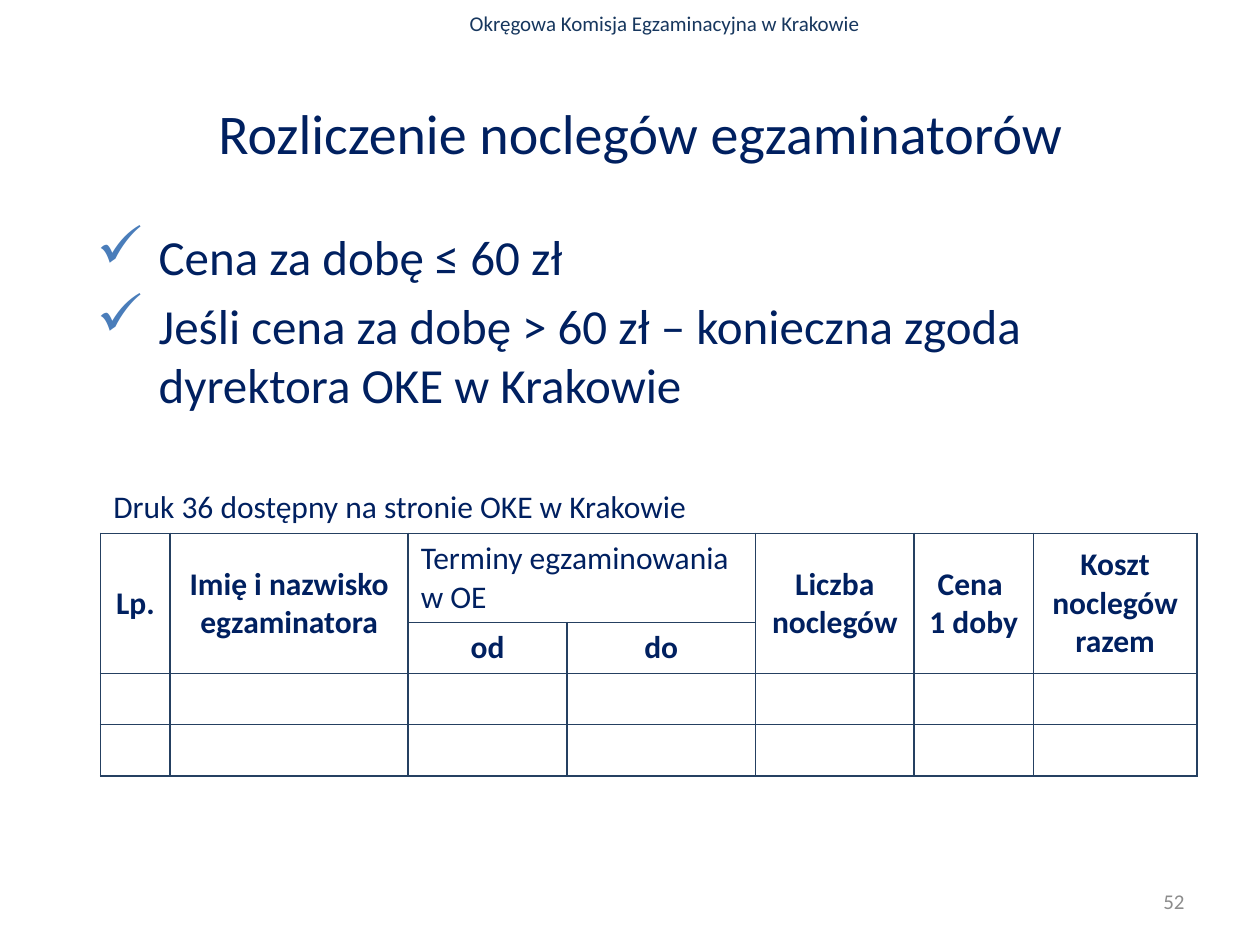
import pptx
import pptx.dml.color
import pptx.enum.text
import pptx.oxml
import pptx.oxml.ns
import pptx.util
from pptx.util import Cm

COLORS = {"text": "002060", "header": "17375E", "check": "4A7DBA",
          "border": "254061", "number": "8C8C8C"}
FONT = "Calibri"
ALIGN = pptx.enum.text.PP_ALIGN
ANCHOR = pptx.enum.text.MSO_ANCHOR

HEADER = "Okręgowa Komisja Egzaminacyjna w Krakowie"
TITLE = "Rozliczenie noclegów egzaminatorów"
RULES = ["Cena za dobę ≤ 60 zł",
         "Jeśli cena za dobę > 60 zł – konieczna zgoda dyrektora OKE w Krakowie"]
PAGE_NUMBER = "52"

COLUMN_WIDTHS = [1.4, 4.8, 3.2, 3.8, 3.2, 2.4, 3.3]
ROW_HEIGHTS = [1.02, 1.8, 1.03, 1.03, 1.03]
# row, column, rows spanned, columns spanned, text, format
CAPTION = {"anchor": ANCHOR.MIDDLE}
GROUP = {"anchor": ANCHOR.TOP}
HEADING = {"anchor": ANCHOR.MIDDLE, "align": ALIGN.CENTER, "bold": True}
CELLS = [
    (0, 0, 1, 7, "Druk 36 dostępny na stronie OKE w Krakowie", CAPTION),
    (1, 0, 2, 1, "Lp.", HEADING),
    (1, 1, 2, 1, "Imię i nazwisko egzaminatora", HEADING),
    (1, 2, 1, 2, "Terminy egzaminowania w OE", GROUP),
    (1, 4, 2, 1, "Liczba noclegów", HEADING),
    (1, 5, 2, 1, "Cena \v1 doby", HEADING),
    (1, 6, 2, 1, "Koszt noclegów razem", HEADING),
    (2, 2, 1, 1, "od", HEADING),
    (2, 3, 1, 1, "do", HEADING),
]


def xml(markup):
    tag, rest = markup.split(" ", 1)
    return pptx.oxml.parse_xml(f"{tag} {pptx.oxml.ns.nsdecls('a')} {rest}")


def write(para, text, size=18, color="text", align=ALIGN.LEFT, bold=False):
    para.text = text
    para.alignment = align
    for span in para.runs:
        span.font.name = FONT
        span.font.size = pptx.util.Pt(size)
        span.font.bold = bold
        span.font.color.rgb = pptx.dml.color.RGBColor.from_string(COLORS[color])


def add_text(page, place, texts, anchor=ANCHOR.TOP, check=False, **style):
    box = page.shapes.add_textbox(*(Cm(length) for length in place))
    frame = box.text_frame
    frame.word_wrap = True
    frame.vertical_anchor = anchor
    for index, text in enumerate(texts):
        para = frame.add_paragraph() if index else frame.paragraphs[0]
        if check:
            add_check(para)
        write(para, text, **style)
        if index:
            para.space_before = pptx.util.Pt(style["size"] * 0.2)


def add_check(para):
    """Give the paragraph a hanging tick bullet."""
    indent = Cm(1.25)
    properties = para._p.get_or_add_pPr()
    properties.set("marL", str(indent))
    properties.set("indent", str(-indent))
    for markup in (f'<a:buClr ><a:srgbClr val="{COLORS["check"]}"/></a:buClr>',
                   '<a:buSzPct val="120000"/>',
                   '<a:buChar char="✓"/>'):
        properties.append(xml(markup))


def set_borders(cell, sides):
    """Draw the sides named by letter and clear the others."""
    properties = cell._tc.get_or_add_tcPr()
    for side in "LRTB":
        fill = (f'<a:solidFill><a:srgbClr val="{COLORS["border"]}"/></a:solidFill>'
                if side in sides else "<a:noFill/>")
        properties.append(xml(f'<a:ln{side} w="12700">{fill}</a:ln{side}>'))


def add_form(page, left, top):
    frame = page.shapes.add_table(
        len(ROW_HEIGHTS), len(COLUMN_WIDTHS), Cm(left), Cm(top),
        Cm(sum(COLUMN_WIDTHS)), Cm(sum(ROW_HEIGHTS)))
    table = frame.table
    table.first_row = table.horz_banding = False
    for column, width in zip(table.columns, COLUMN_WIDTHS):
        column.width = Cm(width)
    for index, (row, height) in enumerate(zip(table.rows, ROW_HEIGHTS)):
        row.height = Cm(height)
        for cell in row.cells:
            set_borders(cell, "LRTB" if index else "B")
            cell.fill.background()
    for row, column, tall, wide, text, style in CELLS:
        cell = table.cell(row, column)
        if tall * wide > 1:
            cell.merge(table.cell(row + tall - 1, column + wide - 1))
        style = dict(style)
        cell.vertical_anchor = style.pop("anchor")
        write(cell.text_frame.paragraphs[0], text, **style)


def main():
    deck = pptx.Presentation()
    deck.slide_width, deck.slide_height = Cm(25.4), Cm(19.05)
    page = deck.slides.add_slide(deck.slide_layouts[6])
    add_text(page, (2.9, 0.08, 21, 0.76), [HEADER],
             size=12, color="header", align=ALIGN.CENTER)
    add_text(page, (1.7, 1.07, 22.43, 3.18), [TITLE], anchor=ANCHOR.MIDDLE,
             size=32, align=ALIGN.CENTER)
    add_text(page, (1.7, 4.45, 22.43, 3.89), RULES, check=True, size=28)
    add_form(page, 2.03, 9.73)
    add_text(page, (18.2, 17.65, 5.93, 1.02), [PAGE_NUMBER], anchor=ANCHOR.MIDDLE,
             size=12, color="number", align=ALIGN.RIGHT)
    deck.save("out.pptx")


if __name__ == "__main__":
    main()
